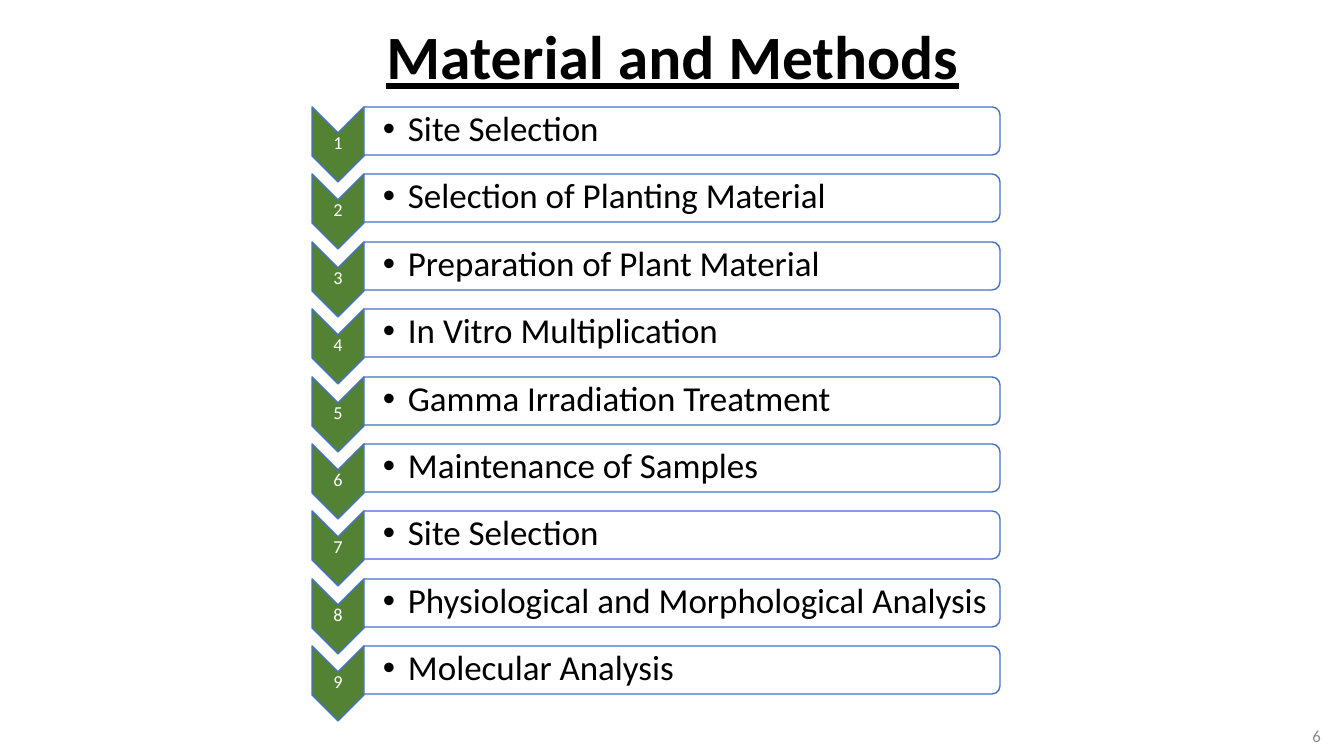
from lxml import etree
from pptx import Presentation
from pptx.dml.color import RGBColor
from pptx.enum.shapes import MSO_SHAPE as SHAPE
from pptx.enum.text import MSO_ANCHOR as ANCHOR, PP_ALIGN as ALIGN
from pptx.oxml.ns import qn
from pptx.util import Pt

EMU_PER_PX = 914400 / 100.8
BLACK = RGBColor(0x00, 0x00, 0x00)
WHITE = RGBColor(0xFF, 0xFF, 0xFF)
GREY = RGBColor(0x8C, 0x8C, 0x8C)
GREEN = RGBColor(0x54, 0x82, 0x35)
BLUE = RGBColor(0x44, 0x72, 0xC4)

STEPS = [
    "Site Selection",
    "Selection of Planting Material",
    "Preparation of Plant Material",
    "In Vitro Multiplication",
    "Gamma Irradiation Treatment",
    "Maintenance of Samples",
    "Site Selection",
    "Physiological and Morphological Analysis",
    "Molecular Analysis",
]
FIRST_TOP, LAST_TOP = 107, 646


def px(n):
    return round(n * EMU_PER_PX)


class SlideBuilder:
    font = "Calibri"

    def __init__(self, prs):
        self.slide = prs.slides.add_slide(prs.slide_layouts[6])

    def turned_shape(self, kind, x, y, w, h, fill, opacity=100):
        """Add a shape turned 90 degrees that covers the box x, y, w, h."""
        shift = (w - h) / 2
        sp = self.slide.shapes.add_shape(
            kind, px(x + shift), px(y - shift), px(h), px(w))
        sp.rotation = 90
        sp.shadow.inherit = False
        sp.fill.solid()
        sp.fill.fore_color.rgb = fill
        if opacity < 100:
            color = sp._element.spPr.find(qn("a:solidFill"))[0]
            etree.SubElement(color, qn("a:alpha"), val=str(opacity * 1000))
        sp.line.color.rgb = BLUE
        sp.line.width = Pt(1)

    def text(self, text, x, y, w, h, size, color, align=ALIGN.LEFT,
             insets=(10, 5, 10, 5), spacing=None, bold=None, underline=None,
             bullet=False):
        """Add one line of text; insets are left, top, right, bottom."""
        tf = self.slide.shapes.add_textbox(
            px(x), px(y), px(w), px(h)).text_frame
        tf.word_wrap = True
        tf.vertical_anchor = ANCHOR.MIDDLE
        (tf.margin_left, tf.margin_top,
         tf.margin_right, tf.margin_bottom) = map(px, insets)
        p = tf.paragraphs[0]
        if bullet:
            self.add_bullet(p)
        p.alignment = align
        p.line_spacing = spacing
        r = p.add_run()
        r.text = text
        r.font.name = self.font
        r.font.size = Pt(size)
        r.font.color.rgb = color
        r.font.bold = bold
        r.font.underline = underline

    def add_bullet(self, p):
        pPr = p._p.get_or_add_pPr()
        pPr.set("marL", str(px(25)))
        pPr.set("indent", str(px(-25)))
        etree.SubElement(pPr, qn("a:buFont"), typeface="Arial")
        etree.SubElement(pPr, qn("a:buChar"), char="•")

    def step(self, number, label, y):
        self.turned_shape(SHAPE.CHEVRON, 312, y, 52, 75, GREEN)
        self.text(str(number), 312, y + 26, 52, 22, 13, WHITE, ALIGN.CENTER,
                  insets=(1, 1, 1, 1), spacing=0.9)
        self.turned_shape(SHAPE.ROUND_2_SAME_RECTANGLE, 364, y, 636, 48,
                          WHITE, opacity=90)
        self.text(label, 364, y + 2, 634, 43, 25, BLACK,
                  insets=(19, 2, 2, 2), spacing=0.9, bullet=True)


def main():
    prs = Presentation()
    prs.slide_width, prs.slide_height = px(1344), px(756)
    s = SlideBuilder(prs)
    s.text("Material and Methods", 93, -13, 1159, 146, 44, BLACK,
           ALIGN.CENTER, spacing=0.9, bold=True, underline=True)
    s.text("6", 1029, 716, 302, 40, 12, GREY, ALIGN.RIGHT)
    pitch = (LAST_TOP - FIRST_TOP) / (len(STEPS) - 1)
    for i, label in enumerate(STEPS):
        s.step(i + 1, label, FIRST_TOP + round(i * pitch))
    prs.save("out.pptx")


if __name__ == "__main__":
    main()
